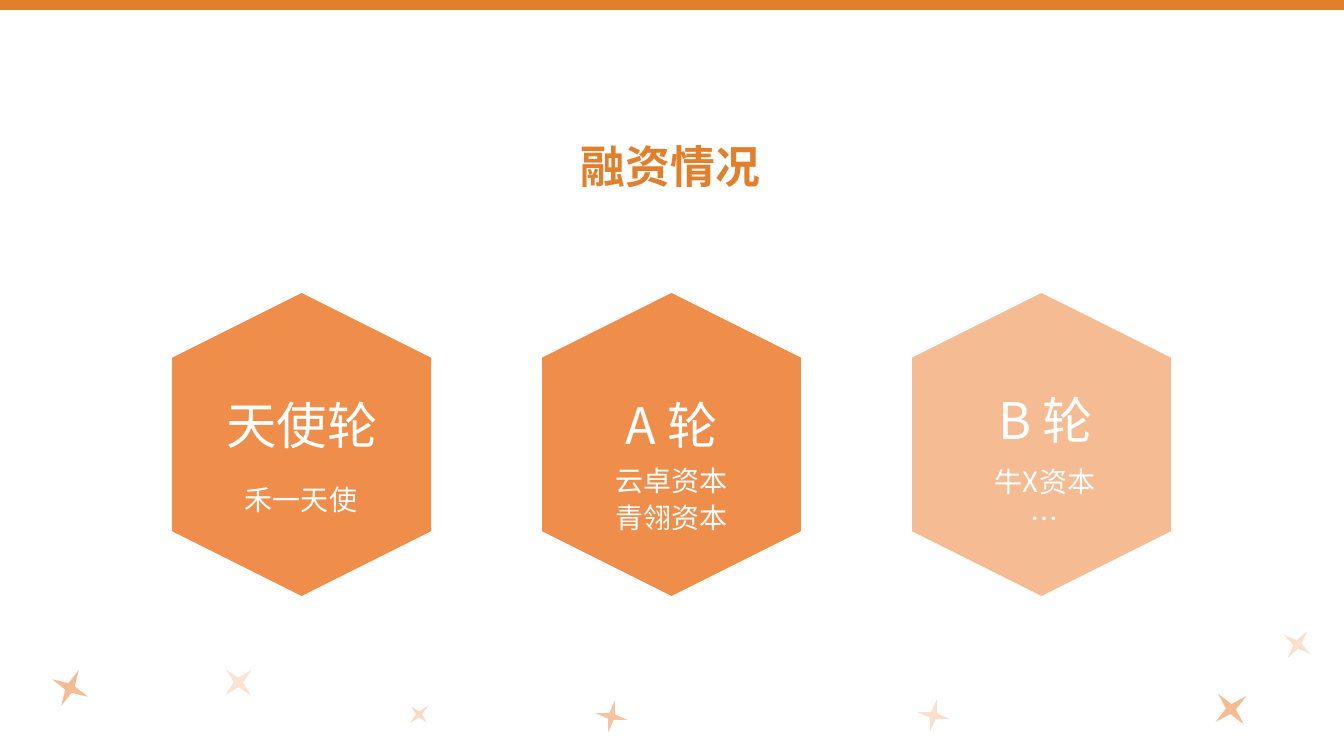
from dataclasses import dataclass

import lxml.etree
import pptx
import pptx.dml.color
import pptx.enum.shapes
import pptx.enum.text
import pptx.oxml.ns
import pptx.util

EMU_PER_INCH = 914400
PX_PER_INCH = 100.8
SLIDE_WIDTH, SLIDE_HEIGHT = 1344, 756
FONT = "Noto Sans CJK SC"
TITLE_ORANGE = "E1802C"
ORANGE = "ED7D31"
PALE_ORANGE = "F4B183"
WHITE = "FFFFFF"
HEXAGON_LEFT, HEXAGON_PITCH = 150, 370


@dataclass(frozen=True)
class Box:
    left: int
    top: int
    width: int
    height: int


@dataclass(frozen=True)
class Label:
    box: Box
    lines: tuple[str, ...]
    size: int


@dataclass(frozen=True)
class FundingRound:
    name: Label
    investors: Label
    color: str


@dataclass(frozen=True)
class Star:
    box: Box
    rotation: int
    opacity: int


ROUNDS = (
    FundingRound(
        Label(Box(206, 383, 192, 78), ("天使轮",), 36),
        Label(Box(227, 474, 148, 47), ("禾一天使",), 20),
        ORANGE,
    ),
    FundingRound(
        Label(Box(567, 383, 210, 78), ("A 轮",), 36),
        Label(Box(571, 455, 202, 85), ("云卓资本", "青翎资本"), 20),
        ORANGE,
    ),
    FundingRound(
        Label(Box(941, 378, 210, 78), ("B 轮",), 36),
        Label(Box(971, 456, 148, 83), ("牛X资本", "…"), 20),
        PALE_ORANGE,
    ),
)

STARS = (
    Star(Box(50, 668, 40, 40), 26, 52),
    Star(Box(220, 664, 37, 37), 46, 22),
    Star(Box(408, 702, 22, 25), 46, 29),
    Star(Box(595, 700, 33, 33), 12, 45),
    Star(Box(917, 699, 33, 33), 12, 24),
    Star(Box(1281, 628, 33, 33), 306, 24),
    Star(Box(1211, 689, 40, 40), 320, 52),
)


def px(length: int) -> pptx.util.Emu:
    return pptx.util.Emu(round(length * EMU_PER_INCH / PX_PER_INCH))


def rgb(color: str) -> pptx.dml.color.RGBColor:
    return pptx.dml.color.RGBColor.from_string(color)


def place(box: Box) -> tuple[pptx.util.Emu, ...]:
    return px(box.left), px(box.top), px(box.width), px(box.height)


def add_filled_shape(
    slide: pptx.slide.Slide,
    kind: pptx.enum.shapes.MSO_SHAPE,
    box: Box,
    color: str,
    opacity: int = 100,
    rotation: int = 0,
) -> None:
    shape = slide.shapes.add_shape(kind, *place(box))
    shape.rotation = rotation
    shape.shadow.inherit = False
    shape.line.fill.background()
    shape.fill.solid()
    shape.fill.fore_color.rgb = rgb(color)
    if opacity < 100:
        fill_color = shape._element.spPr.find(
            "/".join(map(pptx.oxml.ns.qn, ("a:solidFill", "a:srgbClr")))
        )
        alpha = lxml.etree.SubElement(fill_color, pptx.oxml.ns.qn("a:alpha"))
        alpha.set("val", str(opacity * 1000))


def add_label(
    slide: pptx.slide.Slide,
    label: Label,
    color: str = WHITE,
    bold: bool = False,
    alignment: pptx.enum.text.PP_ALIGN = pptx.enum.text.PP_ALIGN.CENTER,
    anchor: pptx.enum.text.MSO_ANCHOR = pptx.enum.text.MSO_ANCHOR.TOP,
    line_spacing: float = 1.1,
) -> None:
    text_frame = slide.shapes.add_textbox(*place(label.box)).text_frame
    text_frame.word_wrap = True
    text_frame.vertical_anchor = anchor
    text_frame.text = "\n".join(label.lines)
    for paragraph in text_frame.paragraphs:
        paragraph.alignment = alignment
        paragraph.line_spacing = line_spacing
        paragraph.font.size = pptx.util.Pt(label.size)
        paragraph.font.bold = bold
        paragraph.font.color.rgb = rgb(color)
        paragraph.font.name = FONT
        properties = paragraph._p.pPr.find(pptx.oxml.ns.qn("a:defRPr"))
        east_asian = lxml.etree.SubElement(properties, pptx.oxml.ns.qn("a:ea"))
        east_asian.set("typeface", FONT)


def main() -> None:
    presentation = pptx.Presentation()
    presentation.slide_width = px(SLIDE_WIDTH)
    presentation.slide_height = px(SLIDE_HEIGHT)
    slide = presentation.slides.add_slide(presentation.slide_layouts[6])
    shapes = pptx.enum.shapes.MSO_SHAPE

    add_label(
        slide,
        Label(Box(571, 133, 204, 71), ("融资情况",), 32),
        color=TITLE_ORANGE,
        bold=True,
        alignment=pptx.enum.text.PP_ALIGN.LEFT,
        anchor=pptx.enum.text.MSO_ANCHOR.MIDDLE,
        line_spacing=0.9,
    )
    add_filled_shape(slide, shapes.RECTANGLE, Box(0, 0, SLIDE_WIDTH, 10), TITLE_ORANGE)

    for index, funding_round in enumerate(ROUNDS):
        hexagon_box = Box(HEXAGON_LEFT + index * HEXAGON_PITCH, 315, 303, 259)
        add_filled_shape(
            slide, shapes.HEXAGON, hexagon_box, funding_round.color, opacity=87, rotation=90
        )
        add_label(slide, funding_round.investors)
        add_label(slide, funding_round.name)

    for star in STARS:
        add_filled_shape(
            slide, shapes.STAR_4_POINT, star.box, ORANGE, star.opacity, star.rotation
        )

    presentation.save("out.pptx")


if __name__ == "__main__":
    main()
